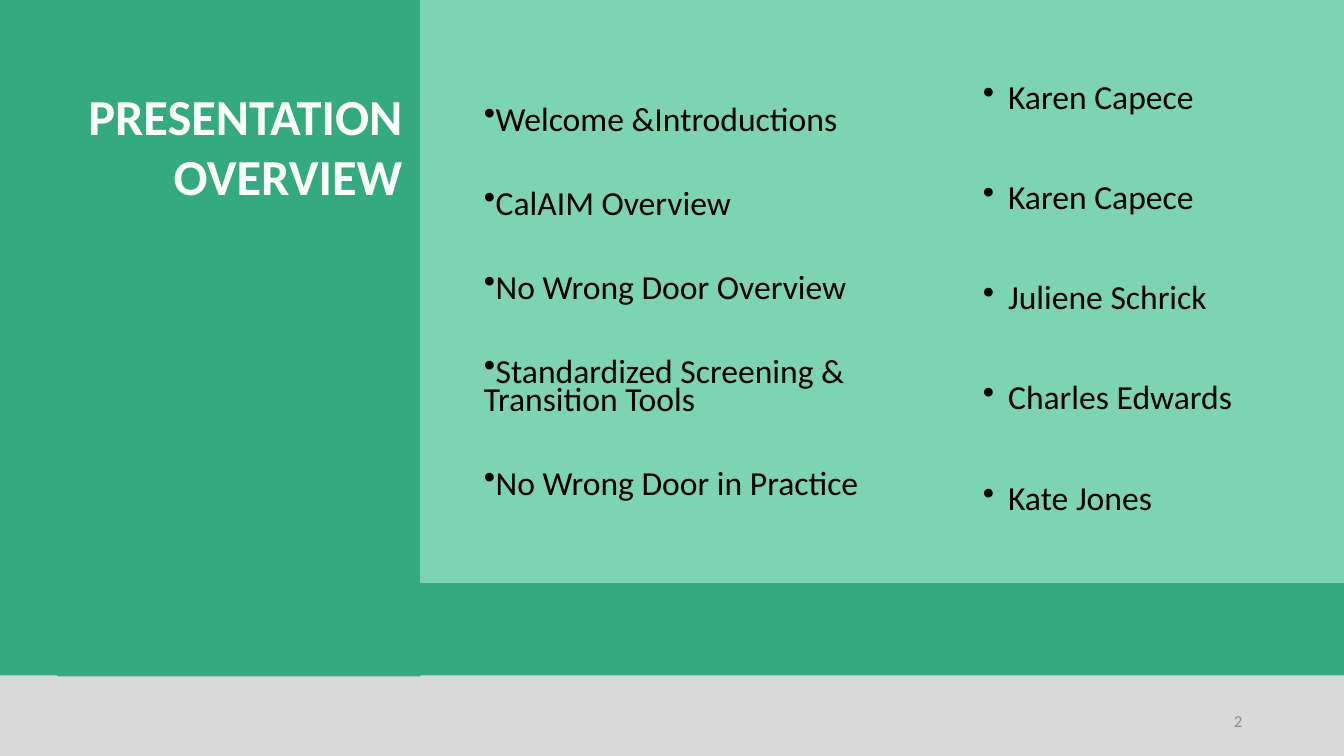
from pptx import Presentation
from pptx.dml.color import RGBColor
from pptx.enum.shapes import MSO_SHAPE
from pptx.enum.text import MSO_ANCHOR, PP_ALIGN
from pptx.oxml.ns import qn
from pptx.util import Inches, Pt

RECTANGLE = MSO_SHAPE.RECTANGLE
TOP, MIDDLE = MSO_ANCHOR.TOP, MSO_ANCHOR.MIDDLE
LEFT, RIGHT = PP_ALIGN.LEFT, PP_ALIGN.RIGHT

GREEN = RGBColor(0x33, 0xAB, 0x7E)
MINT = RGBColor(0x7D, 0xD4, 0xB3)
PALE_GRAY = RGBColor(0xD9, 0xD9, 0xD9)
MID_GRAY = RGBColor(0x8C, 0x8C, 0x8C)
WHITE = RGBColor(0xFF, 0xFF, 0xFF)
BLACK = RGBColor(0x00, 0x00, 0x00)

AGENDA = [
    "Welcome &Introductions",
    "CalAIM Overview",
    "No Wrong Door Overview",
    "Standardized Screening & Transition Tools",
    "No Wrong Door in Practice",
]
SPEAKERS = [
    "Karen Capece",
    "Karen Capece",
    "Juliene Schrick",
    "Charles Edwards",
    "Kate Jones",
]


class OverviewSlide:
    font_name = "Calibri"

    def __init__(self, presentation):
        self.slide = presentation.slides.add_slide(presentation.slide_layouts[6])
        background = self.slide.background.fill
        background.solid()
        background.fore_color.rgb = PALE_GRAY

    def panel(self, left, top, width, height, color, outlined=False):
        panel = self.slide.shapes.add_shape(
            RECTANGLE, Inches(left), Inches(top), Inches(width), Inches(height))
        panel.shadow.inherit = False
        panel.fill.solid()
        panel.fill.fore_color.rgb = color
        if outlined:
            panel.line.color.rgb = color
            panel.line.width = Pt(1)
        else:
            panel.line.fill.background()

    def text(self, left, top, width, height, lines, size, color,
             align=LEFT, anchor=TOP, bold=False):
        """Add one paragraph per line and return the paragraphs."""
        box = self.slide.shapes.add_textbox(
            Inches(left), Inches(top), Inches(width), Inches(height))
        frame = box.text_frame
        frame.word_wrap = True
        frame.vertical_anchor = anchor
        frame.text = "\n".join(lines)
        for paragraph in frame.paragraphs:
            paragraph.alignment = align
            paragraph.font.name = self.font_name
            paragraph.font.size = Pt(size)
            paragraph.font.bold = bold
            paragraph.font.color.rgb = color
        return frame.paragraphs

    def bullets(self, left, top, width, height, items, line_spacing, gap, indent=0):
        paragraphs = self.text(left, top, width, height, items, 24, BLACK)
        for index, paragraph in enumerate(paragraphs):
            paragraph.line_spacing = line_spacing
            paragraph.space_before = Pt(gap if index else 0)
            properties = paragraph._p.get_or_add_pPr()
            properties.set("marL", str(Inches(indent)))
            properties.set("indent", str(-Inches(indent)))
            bullet = properties.makeelement(qn("a:buChar"), {"char": "•"})
            properties.find(qn("a:defRPr")).addprevious(bullet)


def main():
    presentation = Presentation()
    presentation.slide_width = Inches(13.33)
    presentation.slide_height = Inches(7.5)

    overview = OverviewSlide(presentation)
    overview.panel(0, 0, 13.33, 6.7, GREEN)
    overview.panel(0.57, 0, 3.6, 6.71, GREEN)
    overview.panel(4.17, 0, 9.16, 5.78, MINT, outlined=True)
    overview.text(0.57, 0.79, 3.52, 2.28, ["PRESENTATION", "OVERVIEW"],
                  36, WHITE, align=RIGHT, bold=True)
    overview.bullets(4.7, 1.04, 3.93, 4.49, AGENDA, Pt(20), 40)
    overview.bullets(9.65, 0.75, 3.68, 5, SPEAKERS, 0.9, 45.6, indent=0.25)
    overview.text(9.42, 6.95, 3, 0.4, ["2"], 12, MID_GRAY,
                  align=RIGHT, anchor=MIDDLE)

    presentation.save("out.pptx")


if __name__ == "__main__":
    main()
